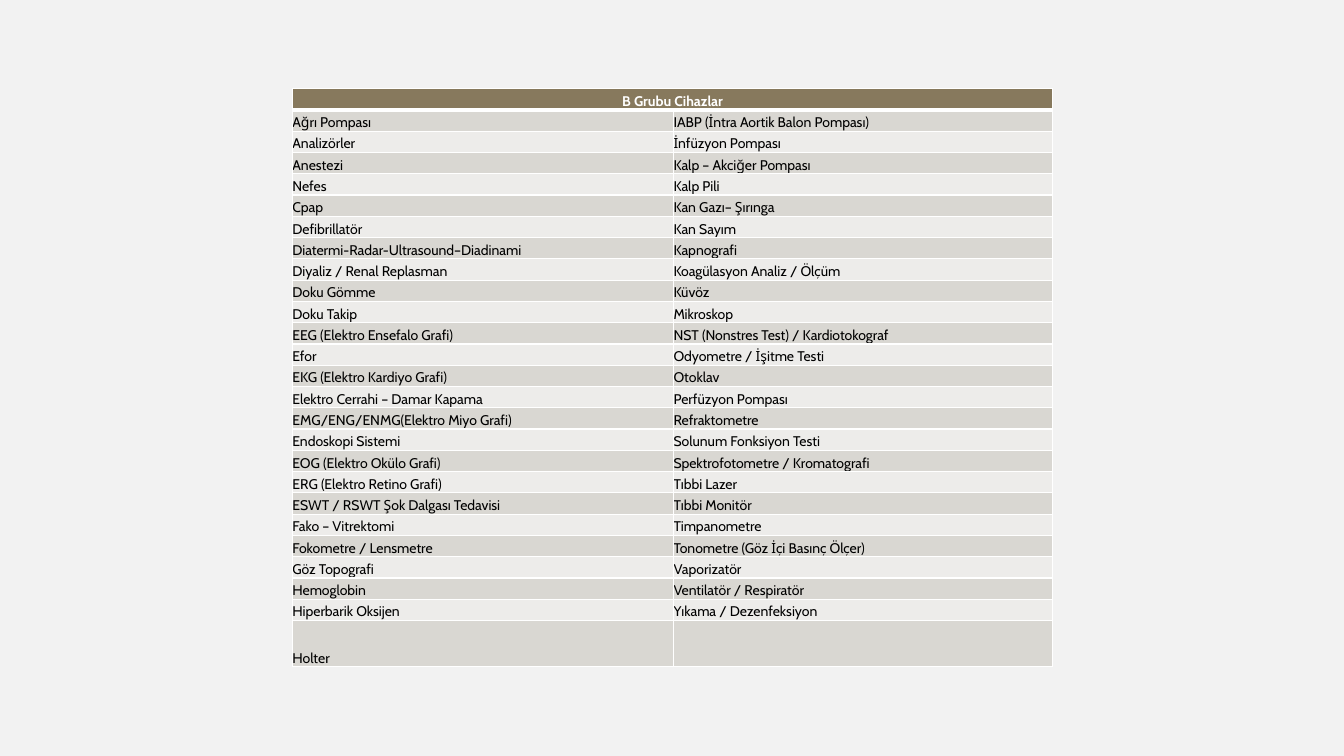
from dataclasses import dataclass
from typing import NamedTuple

from lxml.etree import SubElement
from pptx import Presentation
from pptx.dml.color import RGBColor
from pptx.enum.text import MSO_ANCHOR as Anchor, PP_ALIGN as Align
from pptx.oxml.ns import qn
from pptx.slide import Slide
from pptx.table import _Cell as Cell
from pptx.util import Inches, Pt


@dataclass(frozen=True)
class Theme:
    background: RGBColor = RGBColor.from_string("F2F2F2")
    header: RGBColor = RGBColor.from_string("87795D")
    odd_row: RGBColor = RGBColor.from_string("D9D7D2")
    even_row: RGBColor = RGBColor.from_string("EDECEA")
    text: RGBColor = RGBColor.from_string("000000")
    white: RGBColor = RGBColor.from_string("FFFFFF")
    font: str = "Cabin"
    size: Pt = Pt(10)
    rule: Pt = Pt(1)
    header_rule: Pt = Pt(3)


class Devices(NamedTuple):
    left: str
    right: str


THEME = Theme()
TITLE = "B Grubu Cihazlar"
LEFT, TOP, HEIGHT = 2.9, 0.88, 5.74
COLUMN_WIDTHS = (3.78, 3.76)
LAST_ROW_HEIGHT = 0.46

DEVICES = [
    Devices("Ağrı Pompası", "IABP (İntra Aortik Balon Pompası)"),
    Devices("Analizörler", "İnfüzyon Pompası"),
    Devices("Anestezi", "Kalp – Akciğer Pompası"),
    Devices("Nefes", "Kalp Pili"),
    Devices("Cpap", "Kan Gazı– Şırınga"),
    Devices("Defibrillatör", "Kan Sayım"),
    Devices("Diatermi-Radar-Ultrasound–Diadinami", "Kapnografi"),
    Devices("Diyaliz / Renal Replasman", "Koagülasyon Analiz / Ölçüm"),
    Devices("Doku Gömme", "Küvöz"),
    Devices("Doku Takip", "Mikroskop"),
    Devices("EEG (Elektro Ensefalo Grafi)", "NST (Nonstres Test) / Kardiotokograf"),
    Devices("Efor", "Odyometre / İşitme Testi"),
    Devices("EKG (Elektro Kardiyo Grafi)", "Otoklav"),
    Devices("Elektro Cerrahi – Damar Kapama", "Perfüzyon Pompası"),
    Devices("EMG/ENG/ENMG(Elektro Miyo Grafi)", "Refraktometre"),
    Devices("Endoskopi Sistemi", "Solunum Fonksiyon Testi"),
    Devices("EOG (Elektro Okülo Grafi)", "Spektrofotometre / Kromatografi"),
    Devices("ERG (Elektro Retino Grafi)", "Tıbbi Lazer"),
    Devices("ESWT / RSWT Şok Dalgası Tedavisi", "Tıbbi Monitör"),
    Devices("Fako – Vitrektomi", "Timpanometre"),
    Devices("Fokometre / Lensmetre", "Tonometre (Göz İçi Basınç Ölçer)"),
    Devices("Göz Topografi", "Vaporizatör"),
    Devices("Hemoglobin", "Ventilatör / Respiratör"),
    Devices("Hiperbarik Oksijen", "Yıkama / Dezenfeksiyon"),
    Devices("Holter", ""),
]


def set_borders(cell: Cell, top: Pt, bottom: Pt) -> None:
    """Draw white borders; they must come before the fill in the cell's XML."""
    properties = cell._tc.get_or_add_tcPr()
    widths = {"a:lnL": THEME.rule, "a:lnR": THEME.rule, "a:lnT": top, "a:lnB": bottom}
    for tag, width in widths.items():
        line = SubElement(properties, qn(tag), w=str(int(width)))
        fill = SubElement(line, qn("a:solidFill"))
        SubElement(fill, qn("a:srgbClr"), val=str(THEME.white))


def fill_cell(cell: Cell, text: str, row: int) -> None:
    is_header = row == 0
    set_borders(
        cell,
        top=THEME.header_rule if row == 1 else THEME.rule,
        bottom=THEME.header_rule if is_header else THEME.rule,
    )
    cell.fill.solid()
    row_color = THEME.odd_row if row % 2 else THEME.even_row
    cell.fill.fore_color.rgb = THEME.header if is_header else row_color
    cell.margin_left = cell.margin_right = cell.margin_top = cell.margin_bottom = 0
    cell.vertical_anchor = Anchor.BOTTOM
    cell.text = text
    paragraph = cell.text_frame.paragraphs[0]
    paragraph.alignment = Align.CENTER if is_header else Align.LEFT
    paragraph.font.name = THEME.font
    paragraph.font.size = THEME.size
    paragraph.font.bold = is_header
    paragraph.font.color.rgb = THEME.white if is_header else THEME.text


def add_device_table(slide: Slide) -> None:
    rows = [Devices(TITLE, ""), *DEVICES]
    table = slide.shapes.add_table(
        len(rows), len(COLUMN_WIDTHS),
        Inches(LEFT), Inches(TOP), Inches(sum(COLUMN_WIDTHS)), Inches(HEIGHT),
    ).table
    for column, width in zip(table.columns, COLUMN_WIDTHS):
        column.width = Inches(width)
    row_height = (HEIGHT - LAST_ROW_HEIGHT) / len(DEVICES)
    for row_index, devices in enumerate(rows):
        is_last = row_index == len(DEVICES)
        table.rows[row_index].height = Inches(LAST_ROW_HEIGHT if is_last else row_height)
        for column_index, device in enumerate(devices):
            fill_cell(table.cell(row_index, column_index), device, row_index)
    table.cell(0, 0).merge(table.cell(0, 1))


def main() -> None:
    presentation = Presentation()
    presentation.slide_width = Inches(13.33)
    presentation.slide_height = Inches(7.5)
    slide = presentation.slides.add_slide(presentation.slide_layouts[6])
    slide.background.fill.solid()
    slide.background.fill.fore_color.rgb = THEME.background
    add_device_table(slide)
    presentation.save("out.pptx")


if __name__ == "__main__":
    main()
